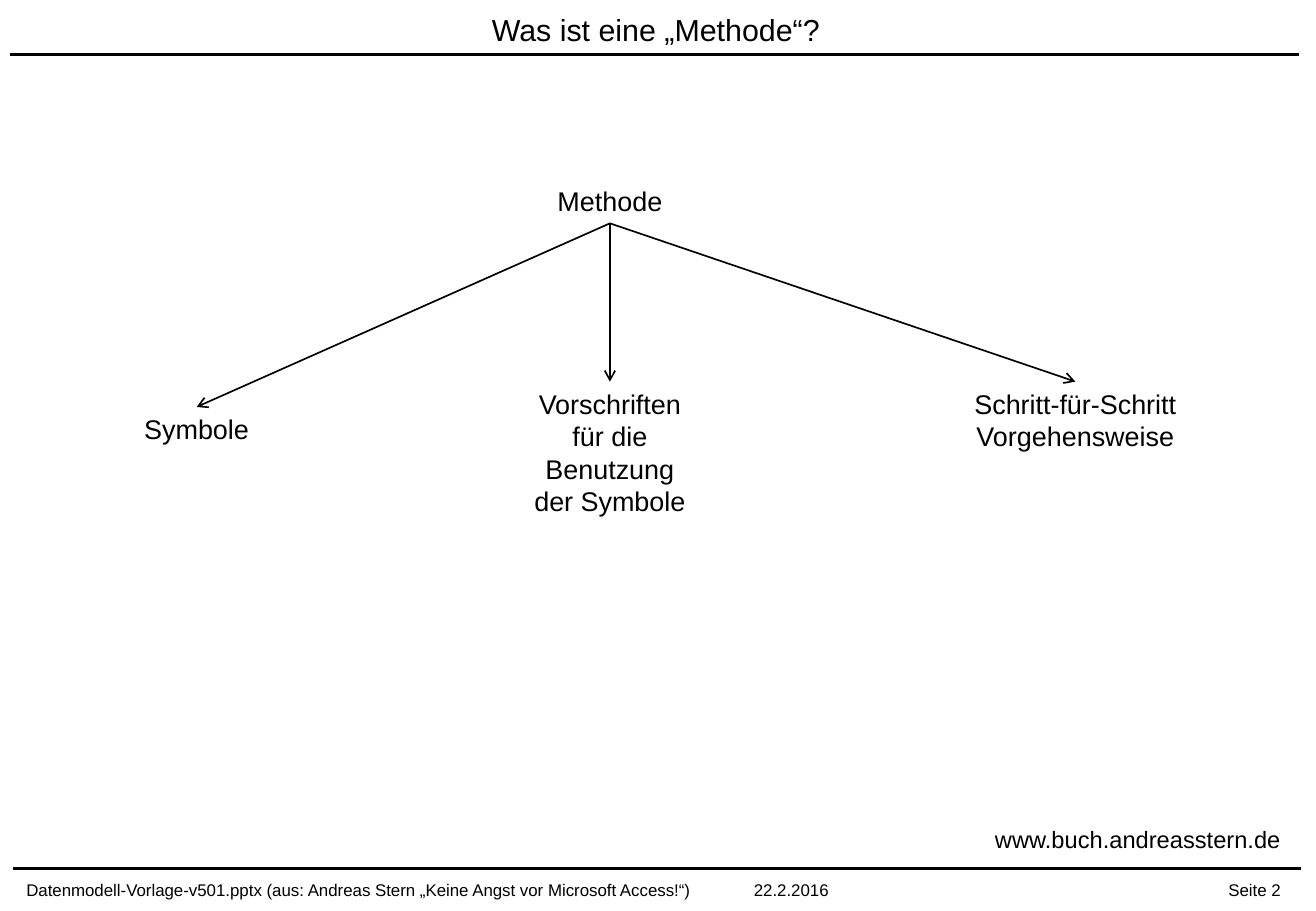
from lxml.etree import SubElement
from pptx import Presentation
from pptx.dml.color import RGBColor
from pptx.enum.shapes import MSO_CONNECTOR
from pptx.enum.text import MSO_ANCHOR, MSO_AUTO_SIZE as AUTO, PP_ALIGN as AL
from pptx.oxml.ns import qn
from pptx.util import Cm, Pt

BLACK = RGBColor(0, 0, 0)
FONT = "Arial"

# Tree of terms: root point where the arrows start, then the branches
ROOT_X, ROOT_TOP, ROOT_BOTTOM = 12.75, 3.73, 4.67
BRANCHES = [  # text, centre x, top, width, height
    ("Symbole", 4.11, 8.51, 2.72, 0.94),
    ("Schritt-für-Schritt\nVorgehensweise", 22.48, 7.98, 4.95, 1.63),
    ("Vorschriften\nfür die\nBenutzung\nder Symbole", ROOT_X, 7.98, 3.71, 3.0),
]


def add_text(s, text, left, top, width, height, size, align=AL.LEFT):
    """Text box that fits its unwrapped lines."""
    sp = s.shapes.add_textbox(Cm(left), Cm(top), Cm(width), Cm(height))
    tf = sp.text_frame
    tf.word_wrap = False
    tf.auto_size = AUTO.SHAPE_TO_FIT_TEXT
    tf.text = text
    for p in tf.paragraphs:
        p.alignment = align
        for r in p.runs:
            r.font.size = Pt(size)
            r.font.name = FONT
            r.font.color.rgb = BLACK
    return tf


def add_node(s, text, x, top, width, height):
    add_text(s, text, x - width / 2, top, width, height, 16, AL.CENTER)


def add_title(s, text):
    tf = add_text(s, text, 1.85, 0.2, 23.72, 0.91, 18, AL.CENTER)
    tf.word_wrap = True
    tf.auto_size = AUTO.NONE
    tf.vertical_anchor = MSO_ANCHOR.MIDDLE
    tf.paragraphs[0].line_spacing = 0.9


def add_line(s, x1, y1, x2, y2, width, arrow=False):
    line = s.shapes.add_connector(MSO_CONNECTOR.STRAIGHT,
                                  Cm(x1), Cm(y1), Cm(x2), Cm(y2))
    line.line.color.rgb = BLACK
    line.line.width = Pt(width)
    if arrow:
        SubElement(line.line._get_or_add_ln(), qn("a:tailEnd"), type="arrow")
    SubElement(line._element.spPr, qn("a:effectLst"))


def add_tab(p, position):
    tabs = SubElement(p._p.get_or_add_pPr(), qn("a:tabLst"))
    SubElement(tabs, qn("a:tab"), pos=str(Cm(position)), algn="l")


def main():
    prs = Presentation()
    prs.slide_width, prs.slide_height = Cm(27.51), Cm(19.05)
    s = prs.slides.add_slide(prs.slide_layouts[6])

    # Footer and rules
    footer = add_text(s, "Datenmodell-Vorlage-v501.pptx (aus: Andreas Stern "
                      "„Keine Angst vor Microsoft Access!“)\t22.2.2016",
                      0.3, 18.26, 17.48, 0.69, 10)
    add_tab(footer.paragraphs[0], 15.21)
    add_text(s, "Seite 2", 25.43, 18.26, 2.13, 0.69, 10)
    add_line(s, 0.2, 1.14, 27.15, 1.14, 1.5)
    add_line(s, 0.28, 18.16, 27.2, 18.16, 1.5)

    add_title(s, "Was ist eine „Methode“?")

    # Root with its branches
    add_node(s, "Methode", ROOT_X, ROOT_TOP, 2.72, 0.94)
    for text, x, top, width, height in BRANCHES:
        add_node(s, text, x, top, width, height)
        add_line(s, ROOT_X, ROOT_BOTTOM, x, top, 1, arrow=True)

    # Web address
    add_text(s, "www.buch.andreasstern.de", 20.55, 17.12, 6.5, 0.86, 14)

    prs.save("out.pptx")


if __name__ == "__main__":
    main()
